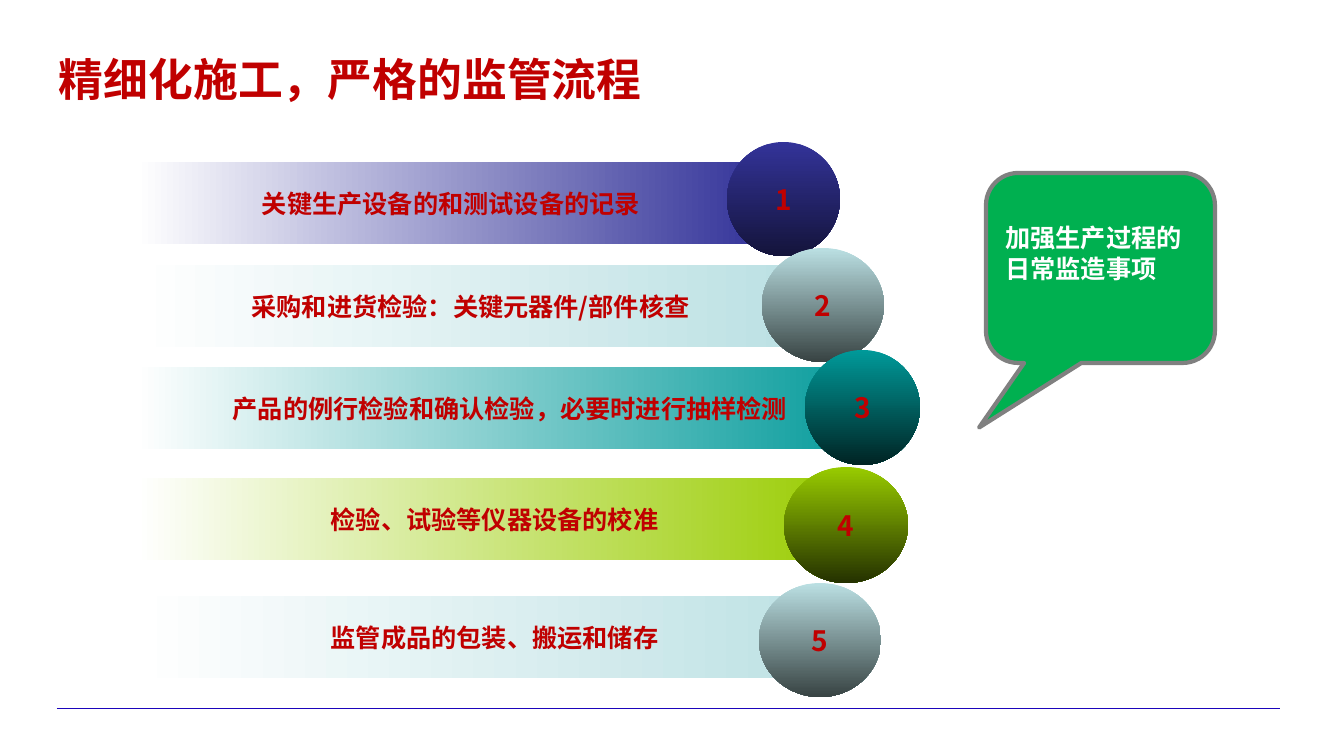
from lxml.etree import SubElement
from pptx import Presentation
from pptx.dml.color import RGBColor
from pptx.enum.shapes import MSO_CONNECTOR, MSO_SHAPE
from pptx.enum.text import MSO_ANCHOR, PP_ALIGN
from pptx.oxml.ns import qn
from pptx.util import Pt

PX = 9071.43
FONT = "Noto Sans CJK SC"
COLORS = {
    "red": "C00000", "white": "FFFFFF", "green": "00B050",
    "gray": "808080", "rule": "1B05BB",
    "navy": "333399", "navy_dark": "14143B",
    "ice": "BBE0E3", "ice_dark": "384343",
    "teal": "009999", "teal_dark": "002424",
    "lime": "99CC00", "lime_dark": "243100",
}
STEPS = [
    ("关键生产设备的和测试设备的记录", "navy", (136, 162, 630, 82), (727, 142, 113, 114)),
    ("采购和进货检验：关键元器件/部件核查", "ice", (136, 265, 669, 82), (762, 248, 122, 114)),
    ("产品的例行检验和确认检验，必要时进行抽样检测", "teal", (136, 367, 748, 82), (805, 350, 115, 115)),
    ("检验、试验等仪器设备的校准", "lime", (136, 478, 717, 82), (784, 467, 124, 116)),
    ("监管成品的包装、搬运和储存", "ice", (136, 596, 717, 82), (759, 583, 122, 114)),
]


def px(*values):
    return [round(v * PX) for v in values]


def rgb(name):
    return RGBColor.from_string(COLORS[name])


def write(sp, text, size, color="red", align=PP_ALIGN.LEFT, **frame):
    tf = sp.text_frame
    for key, value in frame.items():
        setattr(tf, key, value)
    p = tf.paragraphs[0]
    p.alignment = align
    r = p.add_run()
    r.text = text
    for key, value in {"size": Pt(size), "bold": True, "name": FONT}.items():
        setattr(r.font, key, value)
    r.font.color.rgb = rgb(color)
    SubElement(r.font._element, qn("a:ea"), typeface=FONT)


def add_gradient_shape(slide, kind, box, stops, angle, text, size):
    sp = slide.shapes.add_shape(kind, *px(*box))
    sp.shadow.inherit = False
    sp.line.fill.background()
    sp.fill.gradient()
    sp.fill.gradient_angle = angle
    for stop, name in zip(sp.fill.gradient_stops, stops):
        stop.color.rgb = rgb(name)
    write(sp, text, size, align=PP_ALIGN.CENTER, word_wrap=False,
          vertical_anchor=MSO_ANCHOR.MIDDLE)


def add_title(slide, box):
    sp = slide.shapes.add_textbox(*px(*box))
    write(sp, "精细化施工，严格的监管流程", 32, word_wrap=True)


def add_rule(slide, x1, x2, y):
    line = slide.shapes.add_connector(MSO_CONNECTOR.STRAIGHT, *px(x1, y, x2, y))
    line.line.color.rgb = rgb("rule")
    line.line.width = Pt(0.75)
    SubElement(line._element.spPr, qn("a:effectLst"))


def add_steps(slide):
    for text, color, bar, ball in STEPS:
        add_gradient_shape(slide, MSO_SHAPE.RECTANGLE, bar,
                           ("white", color), 0, text, 18)
    for number, (text, color, bar, ball) in enumerate(STEPS, 1):
        add_gradient_shape(slide, MSO_SHAPE.OVAL, ball,
                           (color, color + "_dark"), 270, str(number), 20)


def add_callout(slide, box):
    sp = slide.shapes.add_shape(MSO_SHAPE.ROUNDED_RECTANGULAR_CALLOUT, *px(*box))
    sp.shadow.inherit = False
    for i, value in enumerate((-0.53, 0.84, 0.17)):
        sp.adjustments[i] = value
    sp.fill.solid()
    sp.fill.fore_color.rgb = rgb("green")
    sp.line.color.rgb = rgb("gray")
    sp.line.width = Pt(3)
    write(sp, "加强生产过程的日常监造事项", 18, "white", word_wrap=True,
          vertical_anchor=MSO_ANCHOR.MIDDLE, margin_bottom=px(35)[0])


def main():
    prs = Presentation()
    prs.slide_width, prs.slide_height = px(1344, 756)
    slide = prs.slides.add_slide(prs.slide_layouts[6])
    add_rule(slide, 57, 1280, 709)
    add_title(slide, (49, 47, 977, 65))
    add_steps(slide)
    add_callout(slide, (986, 173, 229, 190))
    prs.save("out.pptx")


if __name__ == "__main__":
    main()
